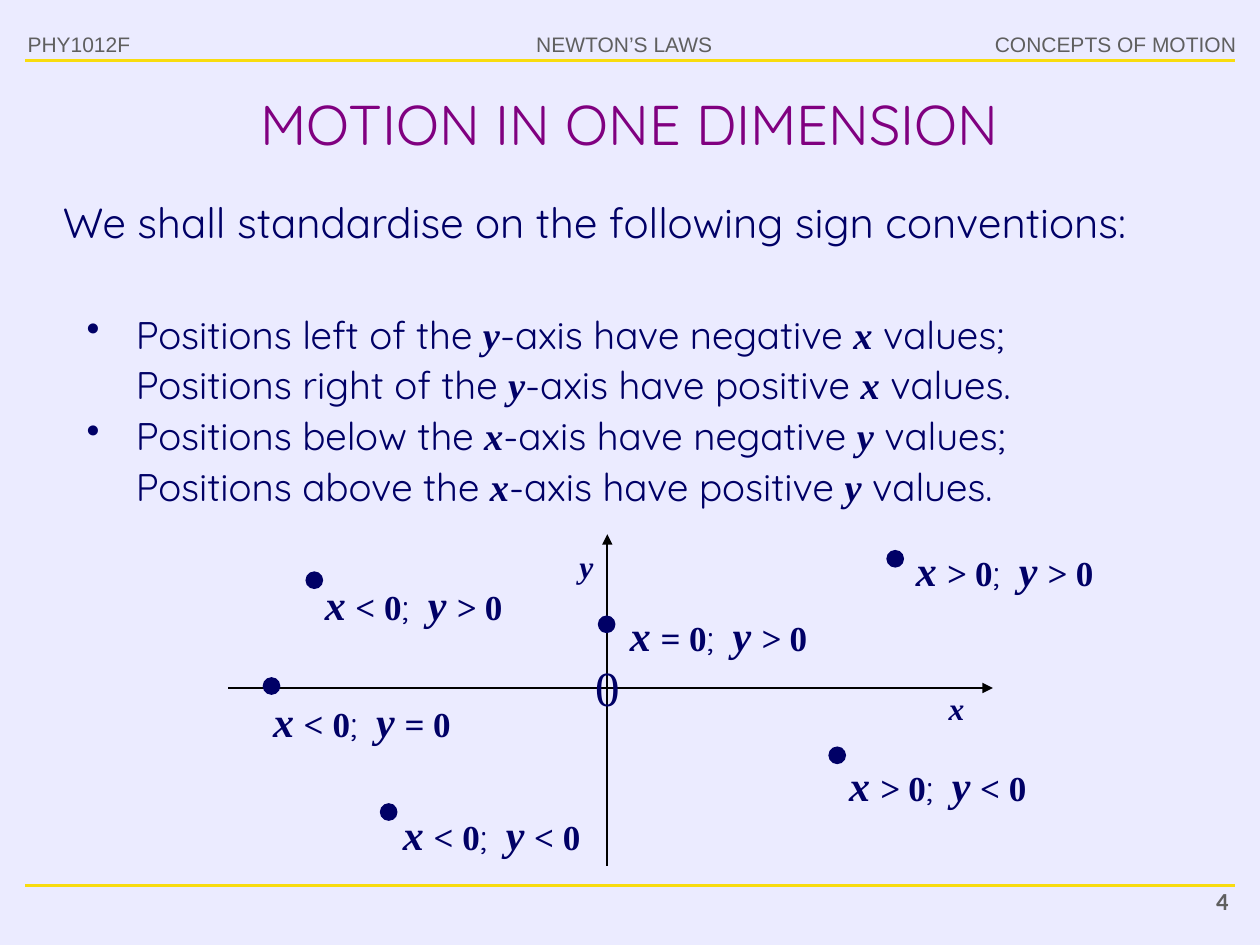
"""Build the slide on sign conventions for motion in one dimension."""
import pptx
import pptx.dml.color
import pptx.enum.shapes
import pptx.enum.text
import pptx.oxml
import pptx.oxml.ns
import pptx.util

Pt = pptx.util.Pt
MAIN, MATH = "Quicksand", "Times New Roman"
THEME = {
    "back": "EBEBFF", "rule": "F8DC0E", "axis": "000000", "ink": "000066",
    "wide": 1.75, "thin": 1.25, "edge": 0.75,
    # style: font, size, colour, bold, italic
    "head": ("Arial", 12, "5F5F5F", False, False),
    "page": ("Calibri", 14, "5F5F5F", True, False),
    "title": (MAIN, 32, "800080", False, False),
    "lead": (MAIN, 24, "000066", False, False),
    "body": (MAIN, 22, "000066", False, False),
    "term": (MATH, 22, "000066", True, True),
    "name": (MATH, 18, "000066", True, True),
    "zero": (MATH, 28, "000066", False, False),
    "var": (MATH, 24, "000066", True, True),
    "sign": (MATH, 20, "000066", True, True),
    "num": (MATH, 20, "000066", True, False),
    "gap": (MAIN, 20, "000066", False, False),
}
HEADS = [
    ("PHY1012F", (8.64, 14.4, 84.96, 23), "l"),
    ("NEWTON’S LAWS", (298.8, 14.4, 115.92, 21.6), "c"),
    ("CONCEPTS OF MOTION", (560.88, 14.4, 152.64, 21.6), "r"),
]
RULES = [34.56, 506.16]
# asterisks enclose the variables
RULE_TEXT = [
    "Positions left of the *y*-axis have negative *x* values;\n"
    "Positions right of the *y*-axis have positive *x* values.",
    "Positions below the *x*-axis have negative *y* values;\n"
    "Positions above the *x*-axis have positive *y* values.",
]
AXES = [(347.04, 494.64, 347.04, 305.28), (130.32, 393.12, 567.36, 393.12)]
NAMES = [
    ("y", "name", (309.6, 306.72, 52.56, 31), "l"),
    ("x", "name", (520.56, 388.08, 41.76, 31), "l"),
    ("0", "zero", (318.24, 368.64, 43.2, 44), "c"),
]
DOT = 9.36
# sign of x, sign of y, dot corner, label corner
SPOTS = [
    ("<", ">", (174.96, 326.88), (164.16, 324)),
    ("<", "=", (150.48, 387.36), (134.64, 390.96)),
    ("<", "<", (217.44, 459.36), (208.8, 455.76)),
    (">", "<", (473.76, 426.96), (463.68, 427.68)),
    (">", ">", (506.88, 314.64), (501.84, 304.56)),
    ("=", ">", (342, 352.08), (338.4, 342)),
]
SIDES = {
    "l": pptx.enum.text.PP_ALIGN.LEFT,
    "c": pptx.enum.text.PP_ALIGN.CENTER,
    "r": pptx.enum.text.PP_ALIGN.RIGHT,
}


def tint(code):
    return pptx.dml.color.RGBColor.from_string(code)


def add_tag(parent, tag, **attrs):
    node = pptx.oxml.parse_xml(f"<a:{tag} {pptx.oxml.ns.nsdecls('a')}/>")
    for key, value in attrs.items():
        node.set(key, value)
    parent.append(node)


def text(slide, paras, box, side="l", left=0, hang=0, lines=None,
         bullet=None, wrap=True, middle=False):
    frame = slide.shapes.add_textbox(*map(Pt, box)).text_frame
    frame.word_wrap = wrap
    if middle:
        frame.vertical_anchor = pptx.enum.text.MSO_ANCHOR.MIDDLE
    for i, runs in enumerate(paras):
        para = frame.add_paragraph() if i else frame.paragraphs[0]
        props = para._p.get_or_add_pPr()
        props.set("marL", str(Pt(left)))
        props.set("indent", str(Pt(-hang)))
        if bullet:
            add_tag(props, "buChar", char=bullet)
        para.alignment = SIDES[side]
        if lines:
            para.line_spacing = lines
        for words, style in runs:
            for j, part in enumerate(words.split("\n")):
                if j:
                    para.add_line_break()
                run = para.add_run()
                run.text = part
                font = run.font
                font.name, size, code, font.bold, font.italic = THEME[style]
                font.size = Pt(size)
                font.color.rgb = tint(code)


def line(slide, ends, code, width, arrow=False):
    link = slide.shapes.add_connector(
        pptx.enum.shapes.MSO_CONNECTOR.STRAIGHT, *map(Pt, ends))
    link.line.color.rgb = tint(code)
    link.line.width = Pt(width)
    if arrow:
        add_tag(link.line._get_or_add_ln(), "tailEnd", type="triangle")
    add_tag(link._element.spPr, "effectLst")


def dot(slide, spot):
    shape = slide.shapes.add_shape(
        pptx.enum.shapes.MSO_SHAPE.OVAL, *map(Pt, (*spot, DOT, DOT)))
    shape.shadow.inherit = False
    shape.fill.solid()
    shape.fill.fore_color.rgb = tint(THEME["ink"])
    shape.line.color.rgb = tint(THEME["ink"])
    shape.line.width = Pt(THEME["edge"])


def mark(words):
    return [(part, "term" if i % 2 else "body")
            for i, part in enumerate(words.split("*"))]


def term(name, sign):
    return [(name, "var"), (" ", "gap"), (sign + " ", "sign"), ("0", "num")]


def main():
    deck = pptx.Presentation()
    deck.slide_width, deck.slide_height = Pt(720), Pt(540)
    slide = deck.slides.add_slide(deck.slide_layouts[6])
    slide.background.fill.solid()
    slide.background.fill.fore_color.rgb = tint(THEME["back"])

    for y in RULES:
        line(slide, (14.4, y, 705.6, y), THEME["rule"], THEME["wide"])
    for words, box, side in HEADS:
        text(slide, [[(words, "head")]], box, side=side, wrap=False)
    text(slide, [[("4", "page")]], (635.04, 502.56, 74.16, 26.64), side="r")
    text(slide, [[("MOTION IN ONE DIMENSION", "title")]],
         (36, 44.64, 648, 51.84), side="c", middle=True)
    lead = "We shall standardise on the following sign conventions:"
    text(slide, [[(lead, "lead")]], (14.4, 105.84, 691.2, 38.88),
         left=14.4, lines=1.1)
    text(slide, [mark(words) for words in RULE_TEXT],
         (14.4, 171.36, 691.2, 123.12),
         left=56.16, hang=28.08, lines=1.1, bullet="•")

    for ends in AXES:
        line(slide, ends, THEME["axis"], THEME["thin"], arrow=True)
    for words, style, box, side in NAMES:
        text(slide, [[(words, style)]], box, side=side, left=14.4, lines=1.1)
    for across, up, spot, corner in SPOTS:
        dot(slide, spot)
        runs = term("x", across) + [(";  ", "gap")] + term("y", up)
        text(slide, [runs], (*corner, 146.88, 38.88), left=14.4, lines=1.1)
    deck.save("out.pptx")


if __name__ == "__main__":
    main()
